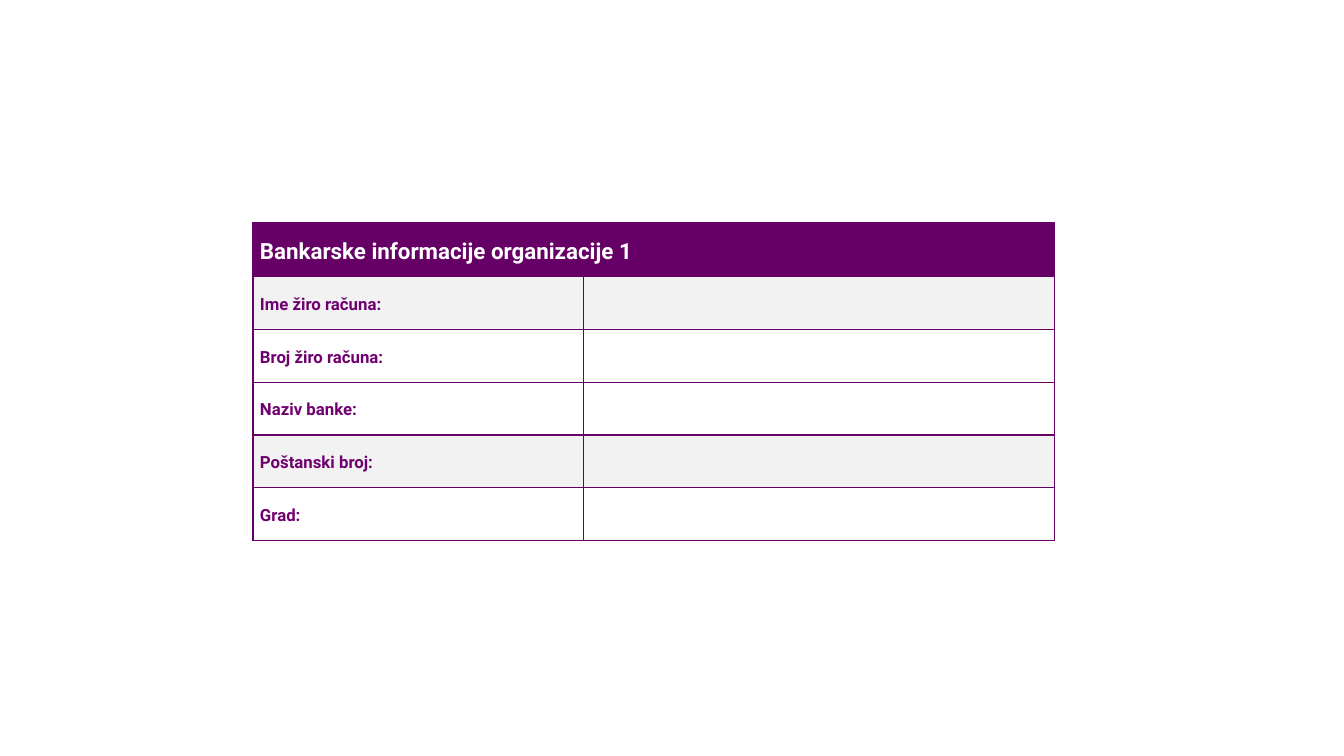
import dataclasses

import lxml.etree
import pptx
import pptx.dml.color
import pptx.enum.text
import pptx.oxml.ns
import pptx.table
import pptx.util

Pt = pptx.util.Pt
RGBColor = pptx.dml.color.RGBColor

PURPLE = RGBColor(0x66, 0x00, 0x66)
LABEL = RGBColor(0x70, 0x00, 0x70)
GREY = RGBColor(0xF2, 0xF2, 0xF2)
WHITE = RGBColor(0xFF, 0xFF, 0xFF)

FONT = "Roboto"
LEFT, TOP = 180.7, 159.1
WIDTHS = (236.2, 336.2)


@dataclasses.dataclass(frozen=True)
class Row:
    text: str
    height: float = 37.6
    fill: RGBColor | None = None
    color: RGBColor = LABEL
    size: float = 12
    after: float = 0


ROWS = (
    Row("Bankarske informacije organizacije 1", 38.2, PURPLE, WHITE, 16, 10),
    Row("Ime žiro računa:", 38.2, GREY),
    Row("Broj žiro računa:"),
    Row("Naziv banke:"),
    Row("Poštanski broj:", fill=GREY),
    Row("Grad:"),
)


def add_edges(cell: pptx.table._Cell) -> None:
    qn = pptx.oxml.ns.qn
    props = cell._tc.get_or_add_tcPr()
    for side in ("lnL", "lnR", "lnT", "lnB"):
        line = lxml.etree.SubElement(props, qn(f"a:{side}"), w=str(Pt(1)))
        solid = lxml.etree.SubElement(line, qn("a:solidFill"))
        lxml.etree.SubElement(solid, qn("a:srgbClr"), val=str(PURPLE))


def style_cell(cell: pptx.table._Cell, row: Row) -> None:
    add_edges(cell)
    if row.fill is None:
        cell.fill.background()
    else:
        cell.fill.solid()
        cell.fill.fore_color.rgb = row.fill
    cell.margin_left = cell.margin_right = Pt(5)
    cell.margin_top = cell.margin_bottom = Pt(0)
    cell.vertical_anchor = pptx.enum.text.MSO_ANCHOR.MIDDLE


def write_text(cell: pptx.table._Cell, row: Row) -> None:
    para = cell.text_frame.paragraphs[0]
    para.line_spacing = 1.15
    para.space_after = Pt(row.after)
    run = para.add_run()
    run.text = row.text
    run.font.name = FONT
    run.font.size = Pt(row.size)
    run.font.bold = True
    run.font.color.rgb = row.color


def main() -> None:
    deck = pptx.Presentation()
    deck.slide_width, deck.slide_height = Pt(960), Pt(540)
    slide = deck.slides.add_slide(deck.slide_layouts[6])
    height = sum(row.height for row in ROWS)
    frame = slide.shapes.add_table(
        len(ROWS), len(WIDTHS), Pt(LEFT), Pt(TOP), Pt(sum(WIDTHS)), Pt(height)
    )
    table = frame.table
    table.horz_banding = False
    for column, width in zip(table.columns, WIDTHS):
        column.width = Pt(width)
    for index, row in enumerate(ROWS):
        table.rows[index].height = Pt(row.height)
        for cell in table.rows[index].cells:
            style_cell(cell, row)
        write_text(table.cell(index, 0), row)
    table.cell(0, 0).merge(table.cell(0, 1))
    deck.save("out.pptx")


if __name__ == "__main__":
    main()
